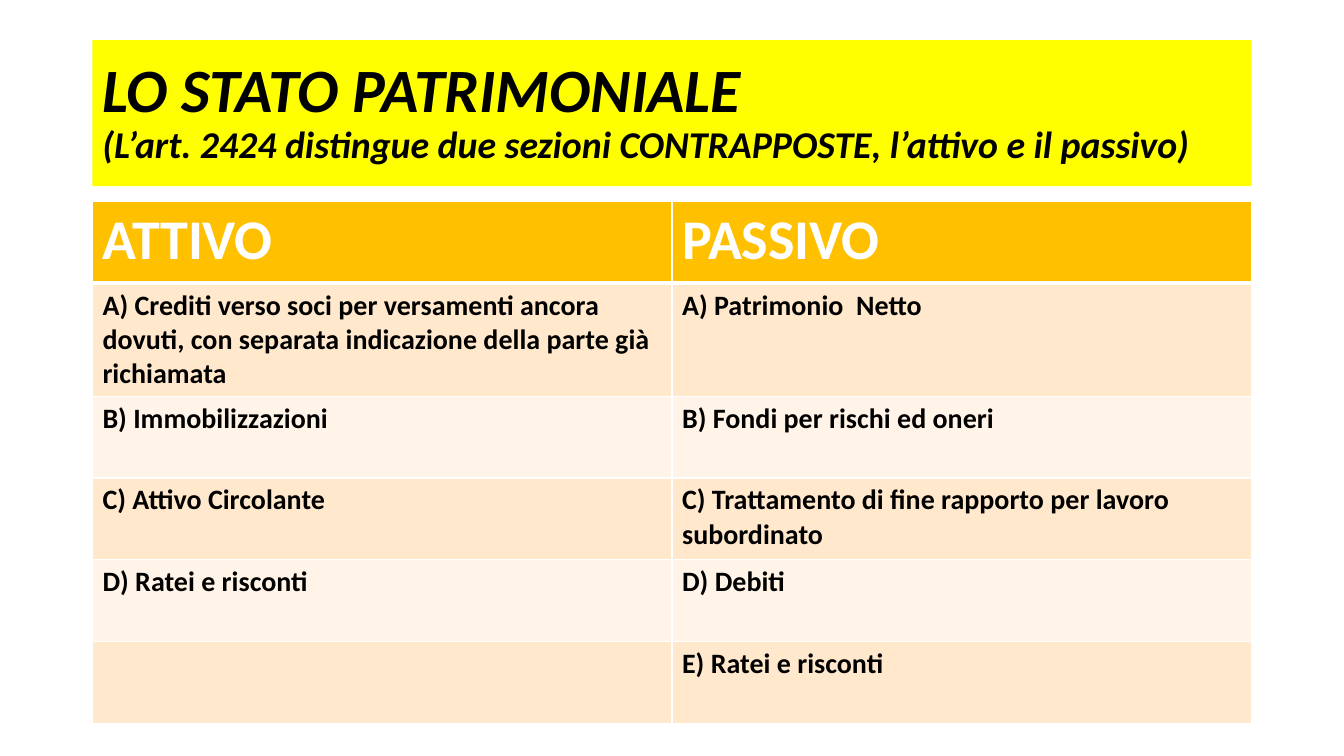
from pptx import Presentation
from pptx.dml.color import RGBColor
from pptx.enum.shapes import MSO_SHAPE
from pptx.enum.text import MSO_ANCHOR, PP_ALIGN
from pptx.oxml import parse_xml
from pptx.oxml.ns import nsdecls
from pptx.util import Cm, Pt

# Content
TITLE = "LO STATO PATRIMONIALE"
NOTE = "(L’art. 2424 distingue due sezioni CONTRAPPOSTE, l’attivo e il passivo)"
ROWS = [
    ("ATTIVO", "PASSIVO"),
    ("A) Crediti verso soci per versamenti ancora dovuti, "
     "con separata indicazione della parte già richiamata",
     "A) Patrimonio  Netto"),
    ("B) Immobilizzazioni", "B) Fondi per rischi ed oneri"),
    ("C) Attivo Circolante",
     "C) Trattamento di fine rapporto per lavoro subordinato"),
    ("D) Ratei e risconti", "D) Debiti"),
    ("", "E) Ratei e risconti"),
]
HEAD, BANDS = "FFC000", ("FFF4E7", "FFE8CC")

# Layout in centimetres
LEFT, WIDTH = 2.33, 29.21
TOP, HIGH = 1.01, 3.68
GRID, ROW = 5.08, 2.06


def paint(fill, color):
    fill.solid()
    fill.fore_color.rgb = RGBColor.from_string(color)


def write(para, text, size=20, color="000000", italic=False):
    run = para.add_run()
    run.text = text
    font = run.font
    font.name, font.size = "Calibri", Pt(size)
    font.bold, font.italic = True, italic
    paint(font.fill, color)


def edge(cell, base):
    props = cell._tc.get_or_add_tcPr()
    widths = {"L": 1, "R": 1, "T": 1, "B": base}
    for spot, (side, width) in enumerate(widths.items()):
        props.insert(spot, parse_xml(
            f'<a:ln{side} {nsdecls("a")} w="{Pt(width)}"><a:solidFill>'
            f'<a:srgbClr val="FFFFFF"/></a:solidFill></a:ln{side}>'))


deck = Presentation()
deck.slide_width, deck.slide_height = Cm(33.87), Cm(19.05)
slide = deck.slides.add_slide(deck.slide_layouts[6])

# Table: header, then alternating bands
table = slide.shapes.add_table(
    len(ROWS), 2, Cm(LEFT), Cm(GRID), Cm(WIDTH), Cm(ROW * len(ROWS))).table
table.horz_banding = False
for r, row in enumerate(ROWS):
    for c, text in enumerate(row):
        cell = table.cell(r, c)
        paint(cell.fill, BANDS[r % 2] if r else HEAD)
        edge(cell, 1 if r else 3)
        if text:
            look = {} if r else {"size": 40, "color": "FFFFFF"}
            write(cell.text_frame.paragraphs[0], text, **look)

# Title banner
banner = slide.shapes.add_shape(
    MSO_SHAPE.RECTANGLE, Cm(LEFT), Cm(TOP), Cm(WIDTH), Cm(HIGH))
banner.shadow.inherit = False
paint(banner.fill, "FFFF00")
banner.line.fill.background()
frame = banner.text_frame
frame.word_wrap = True
frame.vertical_anchor = MSO_ANCHOR.MIDDLE
para = frame.paragraphs[0]
para.alignment, para.line_spacing = PP_ALIGN.LEFT, 0.9
write(para, TITLE, size=44, italic=True)
para.add_line_break()
write(para, NOTE, size=27, italic=True)

deck.save("out.pptx")
